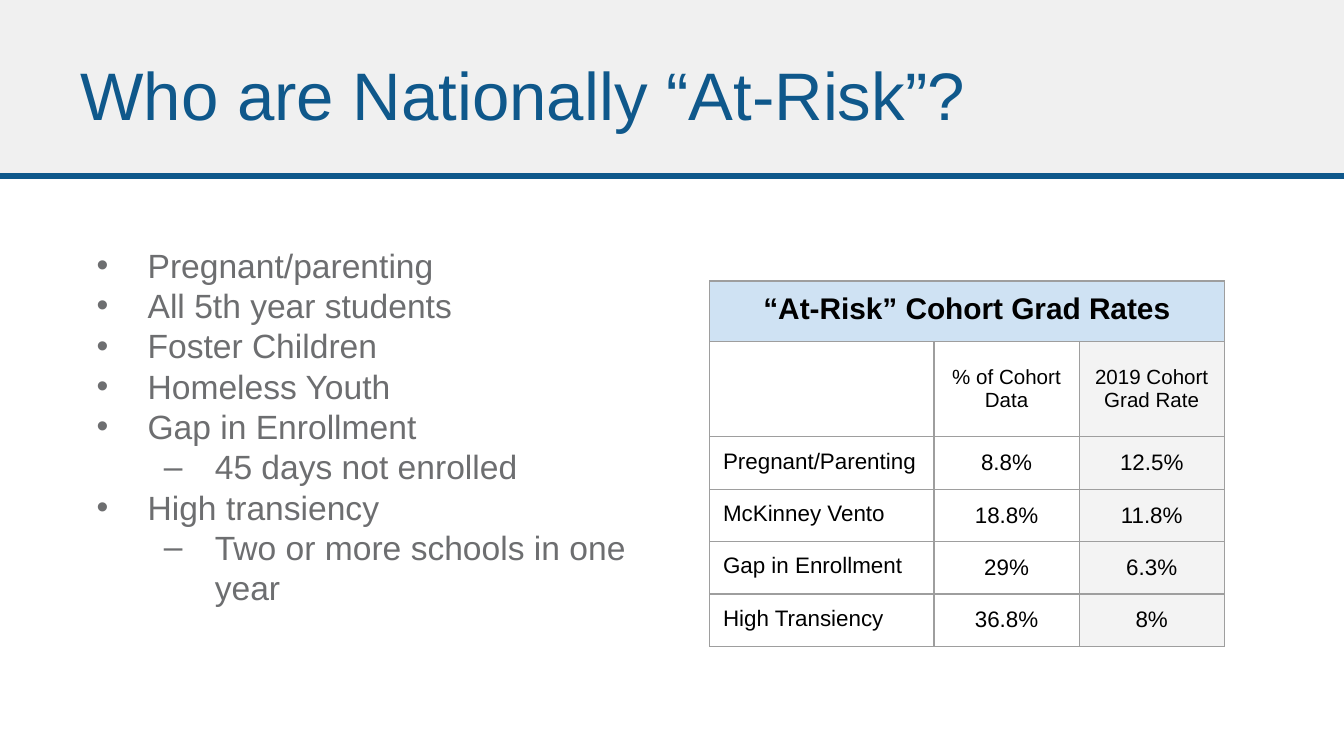
import pptx
import pptx.dml.color
import pptx.enum.shapes
import pptx.enum.text
import pptx.oxml.ns
import pptx.util
from lxml import etree

Inches, Pt = pptx.util.Inches, pptx.util.Pt
RGBColor = pptx.dml.color.RGBColor
ANCHOR, ALIGN = pptx.enum.text.MSO_ANCHOR, pptx.enum.text.PP_ALIGN
qn = pptx.oxml.ns.qn

BLUE = RGBColor(0x0F, 0x58, 0x8B)
BAND_GRAY = RGBColor(0xF0, 0xF0, 0xF0)
BODY_GRAY = RGBColor(0x6D, 0x6E, 0x70)
BLACK = RGBColor(0x00, 0x00, 0x00)
HEADER_BLUE = RGBColor(0xCF, 0xE2, 0xF3)
COLUMN_GRAY = RGBColor(0xF3, 0xF3, 0xF3)
BORDER_GRAY = RGBColor(0x9E, 0x9E, 0x9E)

BULLETS = [
    (0, "Pregnant/parenting"),
    (0, "All 5th year students"),
    (0, "Foster Children"),
    (0, "Homeless Youth"),
    (0, "Gap in Enrollment"),
    (1, "45 days not enrolled"),
    (0, "High transiency"),
    (1, "Two or more schools in one year"),
]
TABLE_TITLE = "“At-Risk” Cohort Grad Rates"
TABLE_HEADINGS = ("", "% of Cohort Data", "2019 Cohort Grad Rate")
TABLE_DATA = [
    ("Pregnant/Parenting", "8.8%", "12.5%"),
    ("McKinney Vento", "18.8%", "11.8%"),
    ("Gap in Enrollment", "29%", "6.3%"),
    ("High Transiency", "36.8%", "8%"),
]


class SlideBuilder:
    font_name = "Arial"
    margin = Inches(0.1)
    cell_margin = Inches(0.09)  # leaves room for the cell borders

    def __init__(self, slide):
        self.slide = slide

    def set_margins(self, target, vertical):
        target.margin_left = target.margin_right = self.margin
        target.margin_top = target.margin_bottom = vertical

    def add_run(self, paragraph, text, size, color, bold=False):
        run = paragraph.add_run()
        run.text = text
        run.font.name = self.font_name
        run.font.size = Pt(size)
        run.font.bold = bold
        run.font.color.rgb = color

    def add_band(self, left, top, width, height, color):
        shape = self.slide.shapes.add_shape(
            pptx.enum.shapes.MSO_SHAPE.RECTANGLE,
            Inches(left), Inches(top), Inches(width), Inches(height))
        shape.shadow.inherit = False
        shape.fill.solid()
        shape.fill.fore_color.rgb = color
        shape.line.fill.background()
        return shape

    def add_line(self, start_x, start_y, end_x, end_y, color, width):
        line = self.slide.shapes.add_connector(
            pptx.enum.shapes.MSO_CONNECTOR.STRAIGHT,
            Inches(start_x), Inches(start_y), Inches(end_x), Inches(end_y))
        line.line.color.rgb = color
        line.line.width = Pt(width)
        etree.SubElement(line._element.spPr, qn("a:effectLst"))

    def add_text_box(self, left, top, width, height, anchor=ANCHOR.TOP):
        box = self.slide.shapes.add_textbox(
            Inches(left), Inches(top), Inches(width), Inches(height))
        frame = box.text_frame
        frame.word_wrap = True
        frame.vertical_anchor = anchor
        self.set_margins(frame, self.margin)
        return frame

    def add_title(self, text, left, top, width, height):
        frame = self.add_text_box(left, top, width, height, ANCHOR.MIDDLE)
        self.add_run(frame.paragraphs[0], text, 36, BLUE)

    def add_bullets(self, items, left, top, width, height):
        frame = self.add_text_box(left, top, width, height)
        for index, (level, text) in enumerate(items):
            paragraph = frame.add_paragraph() if index else frame.paragraphs[0]
            paragraph.level = level
            paragraph.line_spacing = Pt(21.6)
            properties = paragraph._p.get_or_add_pPr()
            properties.set("marL", str(Inches(0.5 * (level + 1))))
            properties.set("indent", str(Inches(-0.38)))
            bullet_color = etree.SubElement(properties, qn("a:buClr"))
            etree.SubElement(bullet_color, qn("a:srgbClr"), val=str(BODY_GRAY))
            etree.SubElement(properties, qn("a:buFont"), typeface=self.font_name)
            etree.SubElement(properties, qn("a:buChar"), char="•–"[level])
            self.add_run(paragraph, text, 18, BODY_GRAY)

    def add_borders(self, cell):
        properties = cell._tc.get_or_add_tcPr()
        for position, side in enumerate(("a:lnL", "a:lnR", "a:lnT", "a:lnB")):
            border = etree.Element(qn(side), w=str(Pt(0.75)))
            fill = etree.SubElement(border, qn("a:solidFill"))
            etree.SubElement(fill, qn("a:srgbClr"), val=str(BORDER_GRAY))
            properties.insert(position, border)

    def fill_cell(self, cell, text, size, align, anchor, fill=None, bold=False):
        self.set_margins(cell, self.cell_margin)
        cell.vertical_anchor = anchor
        if fill is None:
            cell.fill.background()
        else:
            cell.fill.solid()
            cell.fill.fore_color.rgb = fill
        if text:
            paragraph = cell.text_frame.paragraphs[0]
            paragraph.alignment = align
            self.add_run(paragraph, text, size, BLACK, bold)
        self.add_borders(cell)

    def add_rate_table(self, left, top, widths, heights):
        table = self.slide.shapes.add_table(
            len(heights), len(widths), Inches(left), Inches(top),
            Inches(sum(widths)), Inches(sum(heights))).table
        table.first_row = table.horz_banding = False
        for column, width in zip(table.columns, widths):
            column.width = Inches(width)
        for row, height in zip(table.rows, heights):
            row.height = Inches(height)

        # Title row across all columns
        table.cell(0, 0).merge(table.cell(0, len(widths) - 1))
        for column in range(len(widths)):
            self.fill_cell(table.cell(0, column), "" if column else TABLE_TITLE,
                           16, ALIGN.CENTER, ANCHOR.TOP, HEADER_BLUE, bold=True)

        # Column headings and data
        for row, values in enumerate([TABLE_HEADINGS] + TABLE_DATA, start=1):
            for column, text in enumerate(values):
                self.fill_cell(
                    table.cell(row, column), text, 11 if row == 1 else 12,
                    ALIGN.CENTER if column else ALIGN.LEFT,
                    ANCHOR.MIDDLE if column else ANCHOR.TOP,
                    COLUMN_GRAY if column == 2 else None)


def main():
    presentation = pptx.Presentation()
    # Widescreen, 16 to 9
    presentation.slide_width = Inches(10)
    presentation.slide_height = Inches(10) * 9 // 16
    builder = SlideBuilder(
        presentation.slides.add_slide(presentation.slide_layouts[6]))

    # Title band
    builder.add_band(0, 0, 10, 1.31, BAND_GRAY)
    builder.add_line(0, 1.31, 10, 1.31, BLUE, 3)
    builder.add_title("Who are Nationally “At-Risk”?", 0.5, 0.23, 7.67, 0.94)

    # At-risk groups
    builder.add_bullets(BULLETS, 0.5, 1.72, 4.31, 3.52)

    # Graduation rates
    builder.add_rate_table(5.28, 2.09, [1.67, 1.08, 1.08],
                           [0.45, 0.71] + [0.39] * len(TABLE_DATA))

    presentation.save("out.pptx")


if __name__ == "__main__":
    main()
